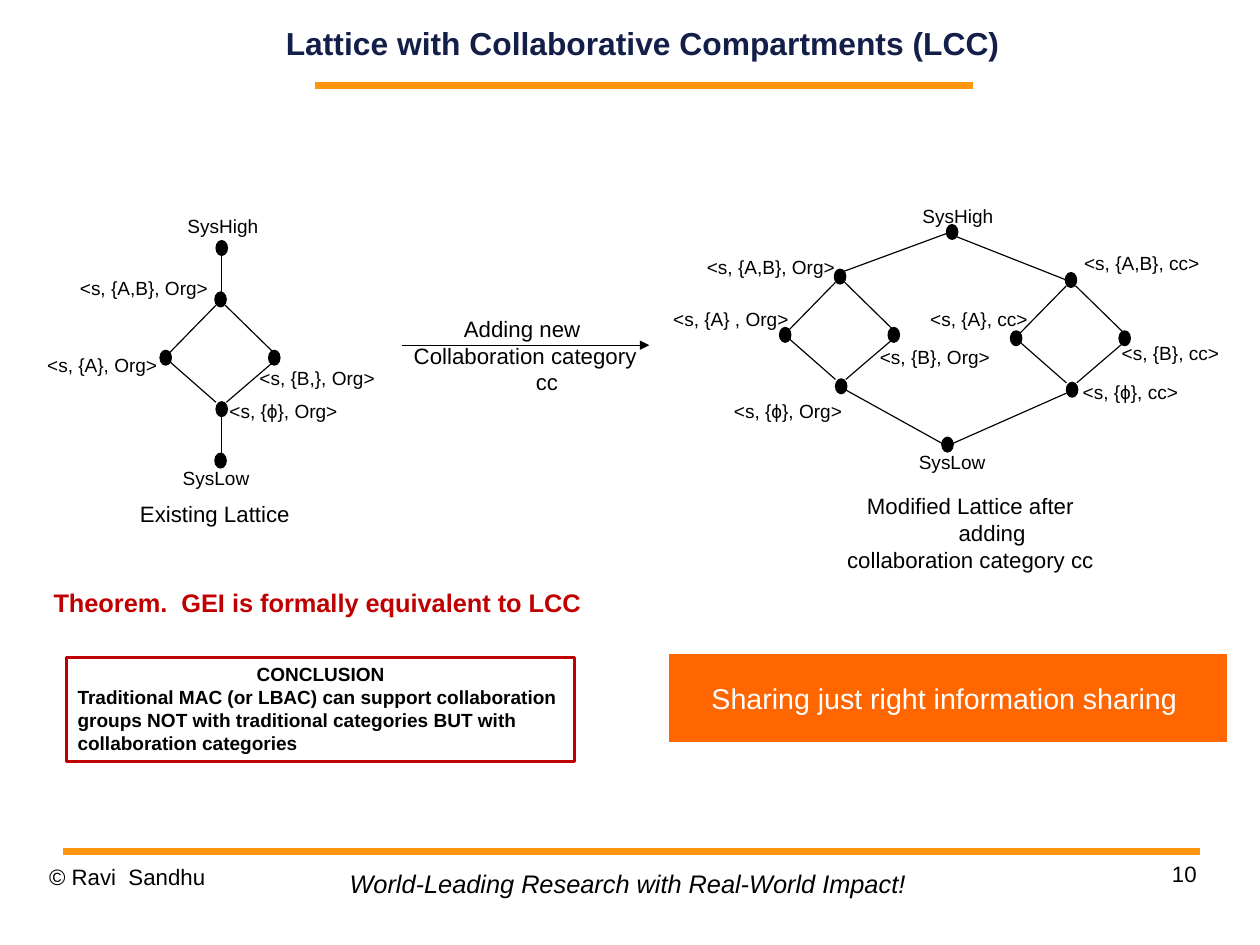
from lxml import etree
from pptx import Presentation
from pptx.dml.color import RGBColor
from pptx.enum import shapes, text
from pptx.oxml import ns
from pptx.util import Inches, Pt

BLACK = RGBColor(0x00, 0x00, 0x00)
WHITE = RGBColor(0xFF, 0xFF, 0xFF)
NAVY = RGBColor(0x13, 0x1F, 0x49)
AMBER = RGBColor(0xFF, 0x95, 0x0E)
ORANGE = RGBColor(0xFF, 0x66, 0x00)
RED = RGBColor(0xC0, 0x00, 0x00)
LEFT, CENTER, RIGHT = text.PP_ALIGN.LEFT, text.PP_ALIGN.CENTER, text.PP_ALIGN.RIGHT

CM_PER_INCH = 2.54
SLIDE_W, SLIDE_H = 28 / CM_PER_INCH, 21 / CM_PER_INCH
DOT_W, DOT_H = 0.1, 0.13
LABEL_H = 0.3
HANGING = 0.38

# Rules of the page: start, end
RULES = [((2.76, 0.75), (8.51, 0.75)), ((0.55, 7.45), (10.5, 7.45))]

# Centre of the top node of each diamond
DIAMOND_TOPS = [(1.93, 2.62), (7.35, 2.42), (9.37, 2.45)]
# Nodes and edges of a diamond, measured from its top node
DIAMOND_NODES = [(0, 0), (-0.48, 0.51), (0.47, 0.51), (0.01, 0.96)]
DIAMOND_EDGES = [
    ((-0.04, 0.05), (-0.47, 0.49)),
    ((-0.45, 0.54), (-0.04, 0.9)),
    ((0.04, 0.05), (0.49, 0.49)),
    ((0.47, 0.54), (0.05, 0.9)),
]

# SysHigh and SysLow nodes and the edges that join them to the diamonds
SYSTEM_NODES = [(1.94, 2.17), (1.93, 4.03), (8.33, 2.03), (8.29, 3.89)]
SYSTEM_EDGES = [
    ((1.94, 2.15), (1.94, 2.61)),
    ((1.94, 3.61), (1.94, 4.07)),
    ((7.34, 2.39), (8.29, 2.04)),
    ((7.36, 3.39), (8.28, 3.9)),
    ((8.29, 3.9), (9.33, 3.44)),
    ((8.29, 2.04), (9.33, 2.45)),
]

# Node label, left, top, width
LABELS = [
    ("SysHigh", 1.44, 1.83, 1.02),
    ("<s, {A,B}, Org>", 0.58, 2.37, 1.36),
    ("<s, {A}, Org>", 0.23, 3.04, 1.33),
    ("<s, {B,}, Org>", 2.11, 3.16, 1.33),
    ("<s, {ϕ}, Org>", 1.82, 3.45, 1.32),
    ("SysLow", 1.38, 4.03, 1.02),
    ("SysHigh", 7.87, 1.74, 1.02),
    ("<s, {A,B}, Org>", 6.06, 2.19, 1.37),
    ("<s, {A} , Org>", 5.46, 2.64, 1.87),
    ("<s, {B}, Org>", 7.53, 2.97, 1.3),
    ("<s, {ϕ}, Org>", 6.03, 3.45, 1.73),
    ("<s, {A,B}, cc>", 9.31, 2.15, 1.36),
    ("<s, {A}, cc>", 8.01, 2.64, 1.11),
    ("<s, {B}, cc>", 9.59, 2.94, 1.3),
    ("<s, {ϕ}, cc>", 9.18, 3.28, 1.42),
    ("SysLow", 7.82, 3.89, 1.02),
]

# Caption lines, box
CAPTIONS = [
    (["Existing Lattice"], (1.12, 4.33, 1.52, 0.34)),
    (["Adding new ", "Collaboration category cc"], (3.45, 2.71, 2.29, 0.8)),
    (["Modified Lattice after adding", "collaboration category cc"], (7.22, 4.26, 2.54, 0.8)),
]
ARROW = ((3.52, 3.02), (5.68, 3.02))

TITLE = "Lattice with Collaborative Compartments (LCC)"
THEOREM = "Theorem.  GEI is formally equivalent to LCC"
CONCLUSION = [
    "CONCLUSION",
    "Traditional MAC (or LBAC) can support collaboration groups NOT with "
    "traditional categories BUT with collaboration categories",
]
BANNER = "Sharing just right information sharing "
COPYRIGHT = "© Ravi  Sandhu"
MOTTO = "World-Leading Research with Real-World Impact!"
PAGE = "10"

prs = Presentation()
prs.slide_width, prs.slide_height = Inches(SLIDE_W), Inches(SLIDE_H)
s = prs.slides.add_slide(prs.slide_layouts[6])


def add_line(start, end, color=BLACK, width=0.75, arrow=False):
    points = [Inches(v) for v in (*start, *end)]
    line = s.shapes.add_connector(shapes.MSO_CONNECTOR.STRAIGHT, *points)
    line.line.color.rgb = color
    line.line.width = Pt(width)
    if arrow:
        etree.SubElement(line.line._get_or_add_ln(), ns.qn("a:tailEnd"), type="triangle")
    etree.SubElement(line._element.spPr, ns.qn("a:effectLst"))


def add_box(kind, box, fill=None, line=BLACK, width=0.75):
    sp = s.shapes.add_shape(kind, *map(Inches, box))
    sp.shadow.inherit = False
    if fill is None:
        sp.fill.background()
    else:
        sp.fill.solid()
        sp.fill.fore_color.rgb = fill
    sp.line.color.rgb = line
    sp.line.width = Pt(width)
    return sp


def add_dot(x, y):
    box = (x - DOT_W / 2, y - DOT_H / 2, DOT_W, DOT_H)
    add_box(shapes.MSO_SHAPE.OVAL, box, fill=BLACK)


def add_text(lines, box=None, sp=None, size=12, color=BLACK, bold=False, italic=False,
             aligns=(LEFT,), middle=False, inset=True, wrap=True, hanging=0):
    """Write lines into sp, or into a new text box; the last align serves all further lines."""
    sp = sp or s.shapes.add_textbox(*map(Inches, box))
    tf = sp.text_frame
    tf.word_wrap = wrap
    tf.vertical_anchor = text.MSO_ANCHOR.MIDDLE if middle else text.MSO_ANCHOR.TOP
    if not inset:
        tf.margin_left = tf.margin_top = tf.margin_right = tf.margin_bottom = 0
    for i, words in enumerate(lines):
        p = tf.paragraphs[0] if i == 0 else tf.add_paragraph()
        p.alignment = aligns[min(i, len(aligns) - 1)]
        if hanging:
            pPr = p._p.get_or_add_pPr()
            pPr.set("marL", str(Inches(hanging)))
            pPr.set("indent", str(-Inches(hanging)))
        r = p.add_run()
        r.text = words
        r.font.name, r.font.size = "Arial", Pt(size)
        r.font.bold, r.font.italic = bold, italic
        r.font.color.rgb = color


for start, end in RULES:
    add_line(start, end, color=AMBER, width=4.31)
add_text([TITLE], (2.41, 0, 6.43, 0.75), size=20, color=NAVY, bold=True,
         aligns=(CENTER,), middle=True, inset=False)

for x, y in DIAMOND_TOPS:
    for (x1, y1), (x2, y2) in DIAMOND_EDGES:
        add_line((x + x1, y + y1), (x + x2, y + y2))
    for dx, dy in DIAMOND_NODES:
        add_dot(x + dx, y + dy)
for start, end in SYSTEM_EDGES:
    add_line(start, end)
for x, y in SYSTEM_NODES:
    add_dot(x, y)
for label, left, top, width in LABELS:
    add_text([label], (left, top, width, LABEL_H), aligns=(CENTER,))

add_line(*ARROW, arrow=True)
for lines, box in CAPTIONS:
    add_text(lines, box, size=14, aligns=(CENTER,), wrap=len(lines) > 1, hanging=HANGING)

add_text([THEOREM], (0.37, 5.09, 4.96, 0.37), size=16, color=RED, bold=True)
conclusion = add_box(shapes.MSO_SHAPE.RECTANGLE, (0.58, 5.75, 4.45, 0.91), line=RED, width=2)
add_text(CONCLUSION, sp=conclusion, bold=True, aligns=(CENTER, LEFT))
banner = add_box(shapes.MSO_SHAPE.RECTANGLE, (5.85, 5.72, 4.89, 0.78), fill=ORANGE, line=WHITE)
add_text([BANNER], sp=banner, size=18, color=WHITE, aligns=(CENTER,), middle=True)

add_text([COPYRIGHT], (0.43, 7.55, 2.57, 0.57), size=14, inset=False)
add_text([MOTTO], (2.96, 7.55, 5.08, 0.37), size=16, italic=True, wrap=False)
add_text([PAGE], (7.9, 7.53, 2.57, 0.57), size=14, aligns=(RIGHT,), inset=False)

prs.save("out.pptx")
